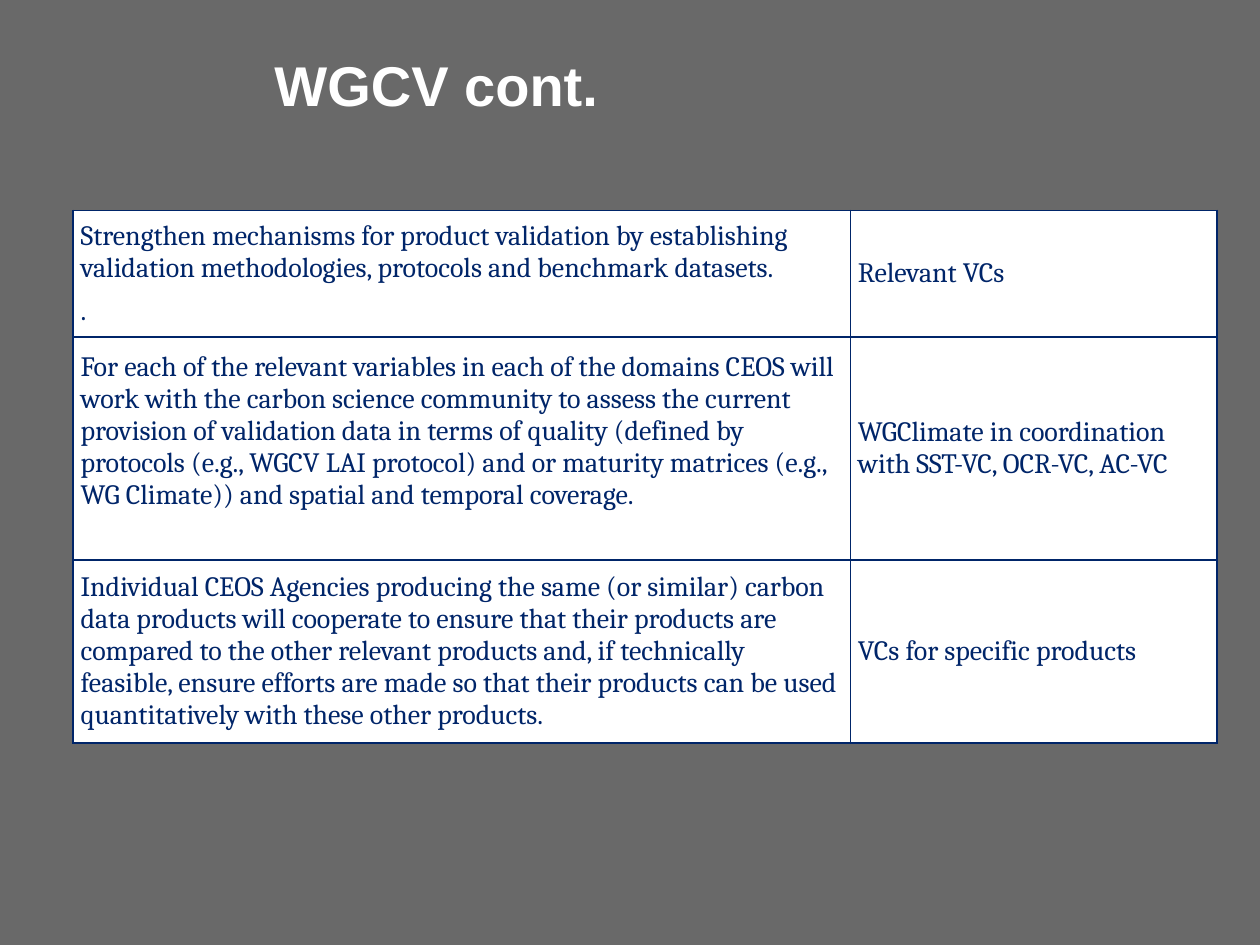
from lxml import etree
from pptx import Presentation
from pptx.dml.color import RGBColor
from pptx.enum import text
from pptx.oxml import ns
from pptx.util import Inches, Pt

GRAY = RGBColor(0x69, 0x69, 0x69)
WHITE = RGBColor(0xFF, 0xFF, 0xFF)
NAVY = RGBColor(0x00, 0x25, 0x69)

ROWS = [
    (0.97, "Strengthen mechanisms for product validation by establishing validation "
           "methodologies, protocols and benchmark datasets.\n.",
     "Relevant VCs"),
    (1.77, "For each of the relevant variables in each of the domains CEOS will work with "
           "the carbon science community to assess the current provision of validation data "
           "in terms of quality (defined by protocols (e.g., WGCV LAI protocol) and or "
           "maturity matrices (e.g., WG Climate)) and spatial and temporal coverage.",
     "WGClimate in coordination with SST-VC, OCR-VC, AC-VC"),
    (1.39, "Individual CEOS Agencies producing the same (or similar) carbon data products "
           "will cooperate to ensure that their products are compared to the other relevant "
           "products and, if technically feasible, ensure efforts are made so that their "
           "products can be used quantitatively with these other products.",
     "VCs for specific products"),
]


def add_borders(cell):
    properties = cell._tc.get_or_add_tcPr()
    for index, side in enumerate(("lnL", "lnR", "lnT", "lnB")):
        line = etree.Element(ns.qn(f"a:{side}"), w=str(Pt(1)))
        fill = etree.SubElement(line, ns.qn("a:solidFill"))
        etree.SubElement(fill, ns.qn("a:srgbClr"), val=str(NAVY))
        properties.insert(index, line)


presentation = Presentation()
presentation.slide_width = Inches(10)
presentation.slide_height = Inches(7.5)
slide = presentation.slides.add_slide(presentation.slide_layouts[6])
slide.background.fill.solid()
slide.background.fill.fore_color.rgb = GRAY

title = slide.shapes.add_textbox(Inches(2.08), Inches(0.35), Inches(6.08), Inches(1.15))
title.text_frame.word_wrap = True
title.text_frame.text = "WGCV cont."
title_font = title.text_frame.paragraphs[0].runs[0].font
title_font.name = "Arial"
title_font.size = Pt(32)
title_font.bold = True
title_font.color.rgb = WHITE

table = slide.shapes.add_table(
    len(ROWS), 2, Inches(0.58), Inches(1.67), Inches(9.08),
    Inches(sum(row[0] for row in ROWS))).table
table.first_row = False
table.horz_banding = False
table.columns[0].width = Inches(6.17)
table.columns[1].width = Inches(2.91)

for row, (height, *contents) in zip(table.rows, ROWS):
    row.height = Inches(height)
    for cell, content in zip(row.cells, contents):
        cell.text_frame.text = content
        cell.vertical_anchor = text.MSO_ANCHOR.MIDDLE
        cell.margin_left = cell.margin_right = Inches(0.06)
        cell.margin_top = cell.margin_bottom = Inches(0.06)
        cell.fill.solid()
        cell.fill.fore_color.rgb = WHITE
        add_borders(cell)
        for index, paragraph in enumerate(cell.text_frame.paragraphs):
            if index:
                paragraph.space_before = Pt(6)
            font = paragraph.runs[0].font
            font.name = "Cambria"
            font.size = Pt(16)
            font.color.rgb = NAVY

table.cell(1, 0).margin_bottom = Inches(0.33)

presentation.save("out.pptx")
